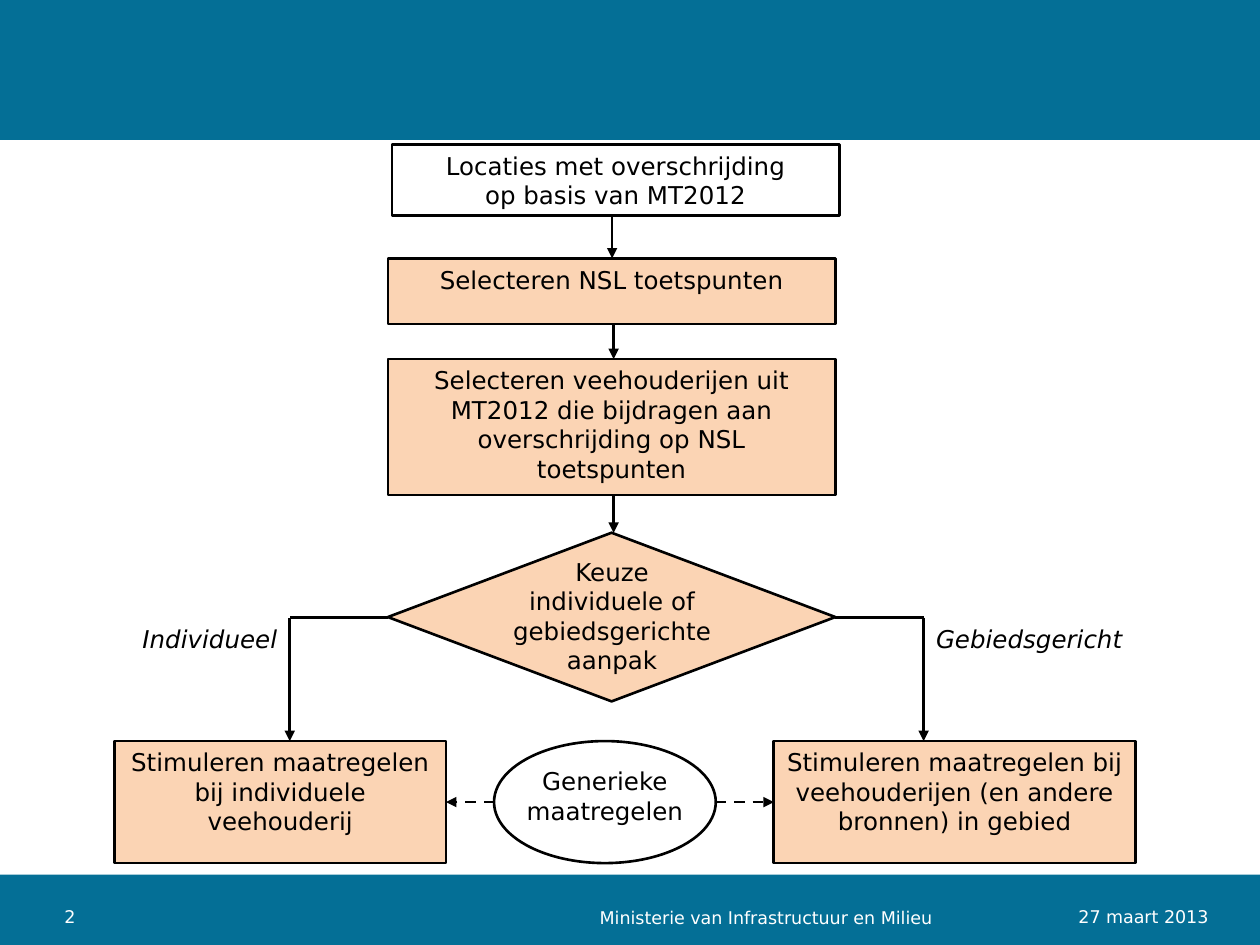
from dataclasses import dataclass

from lxml.etree import SubElement
from pptx import Presentation
from pptx.dml.color import RGBColor
from pptx.enum.dml import MSO_LINE
from pptx.enum.shapes import MSO_CONNECTOR, MSO_SHAPE
from pptx.enum.text import MSO_ANCHOR, PP_ALIGN
from pptx.oxml.ns import qn
from pptx.util import Cm, Pt


@dataclass(frozen=True)
class Theme:
    band: RGBColor = RGBColor(0x04, 0x6F, 0x96)
    step: RGBColor = RGBColor(0xFB, 0xD4, 0xB4)
    white: RGBColor = RGBColor(0xFF, 0xFF, 0xFF)
    ink: RGBColor = RGBColor(0x00, 0x00, 0x00)
    font: str = "DejaVu Sans"
    body_size: Pt = Pt(14)
    footer_size: Pt = Pt(10)
    line_width: Pt = Pt(1.5)


theme = Theme()
presentation = Presentation()
presentation.slide_width = Cm(25.4)
presentation.slide_height = Cm(19.05)
slide = presentation.slides.add_slide(presentation.slide_layouts[6])


def write_text(shape, lines, alignment, size=theme.body_size, color=theme.ink, italic=False):
    """Fill a shape with one paragraph per line, from the top down."""
    frame = shape.text_frame
    frame.word_wrap = True
    frame.vertical_anchor = MSO_ANCHOR.TOP
    for index, line in enumerate(lines):
        paragraph = frame.add_paragraph() if index else frame.paragraphs[0]
        paragraph.alignment = alignment
        run = paragraph.add_run()
        run.text = line
        run.font.name = theme.font
        run.font.size = size
        run.font.color.rgb = color
        run.font.italic = italic


def add_plain_shape(kind, left, top, width, height, fill, outlined=True):
    shape = slide.shapes.add_shape(kind, Cm(left), Cm(top), Cm(width), Cm(height))
    shape.shadow.inherit = False
    if fill is None:
        shape.fill.background()
    else:
        shape.fill.solid()
        shape.fill.fore_color.rgb = fill
    if outlined:
        shape.line.color.rgb = theme.ink
        shape.line.width = theme.line_width
    else:
        shape.line.fill.background()
    return shape


# Bands and footer
for top, height in ((0, 2.82), (17.63, 1.42)):
    add_plain_shape(MSO_SHAPE.RECTANGLE, 0, top, 25.4, height, theme.band, outlined=False)

footers = (
    ("2", 1.3, 18.36, 5.28, 0.33, PP_ALIGN.LEFT),
    ("27 maart 2013", 20.17, 18.36, 4.19, 0.33, PP_ALIGN.RIGHT),
    ("Ministerie van Infrastructuur en Milieu", 12.09, 18.14, 8.61, 0.56, PP_ALIGN.LEFT),
)
for text, left, top, width, height, alignment in footers:
    box = slide.shapes.add_textbox(Cm(left), Cm(top), Cm(width), Cm(height))
    write_text(box, [text], alignment, theme.footer_size, theme.white)
    frame = box.text_frame
    frame.vertical_anchor = MSO_ANCHOR.BOTTOM
    frame.margin_left = frame.margin_right = frame.margin_top = frame.margin_bottom = 0

# Flow lines, drawn first so that the boxes cover their ends
column_left, column_width = 7.82, 9.02
column_right = column_left + column_width
branch_top, outcome_top, outcome_height = 12.45, 14.94, 2.46
individual_x, area_x = 5.84, 18.62
generic_y = outcome_top + outcome_height / 2

flow_lines = (
    # start x, start y, end x, end y, arrowhead, dashed
    (12.34, 4.34, 12.34, 5.21, True, False),
    (12.37, 5.72, 12.37, 7.24, True, False),
    (12.37, 9.19, 12.37, 10.74, True, False),
    (column_left, branch_top, individual_x, branch_top, False, False),
    (individual_x, branch_top, individual_x, outcome_top, True, False),
    (area_x, branch_top, column_right, branch_top, False, False),
    (area_x, branch_top, area_x, outcome_top, True, False),
    (9.96, generic_y, 8.99, generic_y, True, True),
    (14.43, generic_y, 15.6, generic_y, True, True),
)
for start_x, start_y, end_x, end_y, has_arrow, dashed in flow_lines:
    connector = slide.shapes.add_connector(
        MSO_CONNECTOR.STRAIGHT, Cm(start_x), Cm(start_y), Cm(end_x), Cm(end_y)
    )
    connector.line.color.rgb = theme.ink
    connector.line.width = theme.line_width
    if dashed:
        connector.line.dash_style = MSO_LINE.DASH
    if has_arrow:
        SubElement(connector.line._get_or_add_ln(), qn("a:tailEnd"), type="triangle")
    SubElement(connector._element.spPr, qn("a:effectLst"))

# Steps and outcomes
boxes = (
    (["Locaties met overschrijding", "op basis van MT2012"], 7.9, 2.92, column_width, 1.42, None),
    (["Selecteren NSL toetspunten"], column_left, 5.21, column_width, 1.32, theme.step),
    (["Selecteren veehouderijen uit MT2012 die bijdragen aan overschrijding op NSL toetspunten"],
     column_left, 7.24, column_width, 2.74, theme.step),
    (["Stimuleren maatregelen bij individuele veehouderij"],
     2.31, outcome_top, 6.68, outcome_height, theme.step),
    (["Stimuleren maatregelen bij veehouderijen (en andere bronnen) in gebied"],
     15.6, outcome_top, 7.29, outcome_height, theme.step),
)
for lines, left, top, width, height, fill in boxes:
    box = add_plain_shape(MSO_SHAPE.RECTANGLE, left, top, width, height, fill)
    write_text(box, lines, PP_ALIGN.CENTER)

add_plain_shape(MSO_SHAPE.FLOWCHART_DECISION, column_left, 10.74, column_width, 3.4, theme.step)
add_plain_shape(MSO_SHAPE.OVAL, 9.96, outcome_top, 4.47, outcome_height, theme.white)

# Text over the decision and the ellipse, and the branch names
labels = (
    (["Keuze", "individuele of", "gebiedsgerichte", "aanpak"],
     8.1, 11.1, 8.48, 2.97, PP_ALIGN.CENTER, False),
    (["Generieke", "maatregelen"], 9.96, 15.32, 4.47, 2.11, PP_ALIGN.CENTER, False),
    (["Individueel"], 2.49, branch_top, 3.35, 1.3, PP_ALIGN.RIGHT, True),
    (["Gebiedsgericht"], area_x, branch_top, 4.29, 1.42, PP_ALIGN.LEFT, True),
)
for lines, left, top, width, height, alignment, italic in labels:
    label = slide.shapes.add_textbox(Cm(left), Cm(top), Cm(width), Cm(height))
    write_text(label, lines, alignment, italic=italic)

presentation.save("out.pptx")
